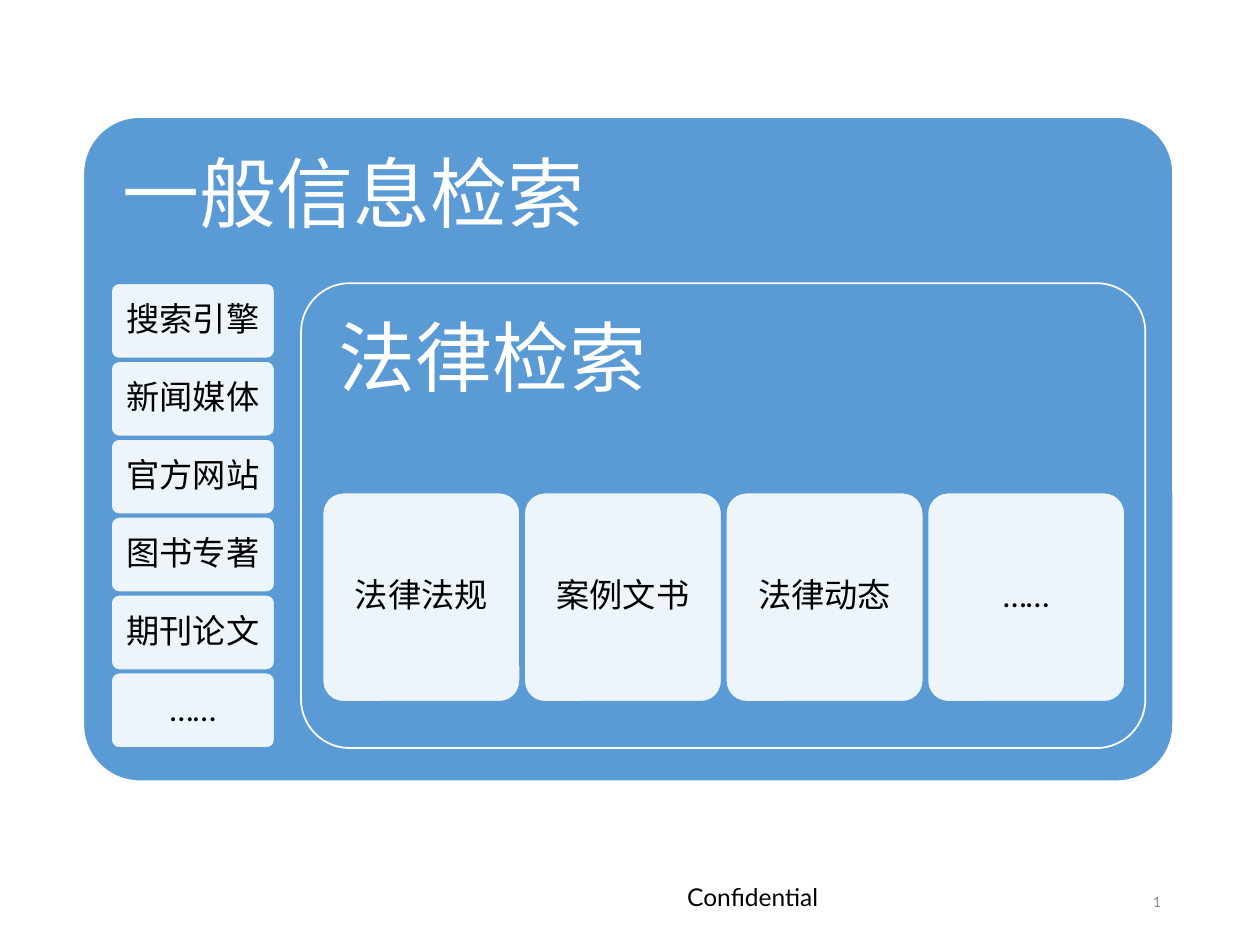
import pptx
import pptx.util
import pptx.dml.color
import pptx.enum.shapes
import pptx.enum.text
import pptx.oxml
import pptx.oxml.ns
import lxml.etree

Cm = pptx.util.Cm
ALIGN = pptx.enum.text.PP_ALIGN
ANCHOR = pptx.enum.text.MSO_ANCHOR
BLUE, WHITE, BLACK, GRAY = "5B9BD5", "FFFFFF", "000000", "8C8C8C"
HEADING = {"size": 44, "color": WHITE, "align": ALIGN.LEFT, "anchor": ANCHOR.TOP, "inset": 0.46}
CARD = {"size": 19, "color": BLACK, "align": ALIGN.CENTER, "anchor": ANCHOR.MIDDLE, "inset": 0.2}


def color(hex_string):
    return pptx.dml.color.RGBColor.from_string(hex_string)


def write_text(shape, text, size, color_hex, align, anchor, inset, font="Calibri", line_spacing=0.9):
    frame = shape.text_frame
    frame.text = text
    margin = Cm(inset)
    frame_format = {
        "word_wrap": True, "auto_size": pptx.enum.text.MSO_AUTO_SIZE.NONE,
        "vertical_anchor": anchor, "margin_left": margin, "margin_right": margin,
        "margin_top": margin, "margin_bottom": margin,
    }
    paragraph = frame.paragraphs[0]
    run_font = paragraph.runs[0].font
    formats = (
        (frame, frame_format),
        (paragraph, {"alignment": align, "line_spacing": line_spacing}),
        (run_font, {"size": pptx.util.Pt(size), "name": font}),
    )
    for target, values in formats:
        for name, value in values.items():
            setattr(target, name, value)
    run_font.color.rgb = color(color_hex)


def write_styled(shape, text, style):
    write_text(shape, text, style["size"], style["color"], style["align"],
               style["anchor"], style["inset"])


def add_round_box(slide, box, radius, fill, line, opacity=100):
    shape = slide.shapes.add_shape(
        pptx.enum.shapes.MSO_SHAPE.ROUNDED_RECTANGLE, *map(Cm, box))
    shape.adjustments[0] = radius
    shape.shadow.inherit = False
    shape.fill.solid()
    shape.fill.fore_color.rgb = color(fill)
    shape.line.color.rgb = color(line)
    shape.line.width = pptx.util.Pt(1)
    if opacity < 100:
        fill_color = shape.fill._xPr.find(".//" + pptx.oxml.ns.qn("a:srgbClr"))
        alpha = lxml.etree.SubElement(fill_color, pptx.oxml.ns.qn("a:alpha"))
        alpha.set("val", str(opacity * 1000))
    return shape


def add_cards(slide, box, labels, gap, vertical):
    left, top, width, height = box
    count = len(labels)
    length = ((height if vertical else width) - gap * (count - 1)) / count
    for index, label in enumerate(labels):
        offset = index * (length + gap)
        if vertical:
            card_box = (left, top + offset, width, length)
        else:
            card_box = (left + offset, top, length, height)
        card = add_round_box(slide, card_box, 0.105, WHITE, BLUE, 90)
        write_styled(card, label, CARD)


def add_legal_search(slide, box):
    left, top, width, height = box
    panel = add_round_box(slide, box, 0.105, BLUE, WHITE)
    write_styled(panel, "法律检索", HEADING)
    labels = ["法律法规", "案例文书", "法律动态", "……"]
    add_cards(slide, (left + 0.43, top + 4.22, width - 0.84, 4.22), labels, 0.08, False)


def add_general_search(slide, box):
    left, top, width, height = box
    add_round_box(slide, box, 0.085, BLUE, WHITE)

    title = slide.shapes.title
    title_box = {"left": left + 0.33, "top": top + 0.33, "width": width - 0.66, "height": 2.6}
    for name, value in title_box.items():
        setattr(title, name, Cm(value))
    write_styled(title, "一般信息检索", HEADING)
    slide.shapes._spTree.append(title._element)

    labels = ["搜索引擎", "新闻媒体", "官方网站", "图书专著", "期刊论文", "……"]
    add_cards(slide, (left + 0.56, top + 3.35, 3.3, 9.37), labels, 0.05, True)
    add_legal_search(slide, (left + 4.39, top + 3.35, 17.02, 9.37))


def add_footer(slide, box):
    left, top, width, height = box
    notice = slide.shapes.add_textbox(Cm(left), Cm(top), Cm(4.45), Cm(0.86))
    write_text(notice, "Confidential", 14, BLACK, ALIGN.CENTER, ANCHOR.MIDDLE, 0.13, "Lato", 1.0)
    number = slide.shapes.add_textbox(Cm(left + width - 5.72), Cm(top), Cm(5.72), Cm(height))
    write_text(number, "1", 9, GRAY, ALIGN.RIGHT, ANCHOR.MIDDLE, 0.25, line_spacing=1.0)
    run = number.text_frame.paragraphs[0].runs[0]._r
    run.tag = pptx.oxml.ns.qn("a:fld")
    run.set("id", "{B6F15528-21DE-4FAA-801E-634DDDAF4B2B}")
    run.set("type", "slidenum")


def main():
    presentation = pptx.Presentation()
    presentation.slide_width = Cm(25.4)
    presentation.slide_height = Cm(19.05)
    slide = presentation.slides.add_slide(presentation.slide_layouts[5])
    add_general_search(slide, (1.68, 2.36, 21.97, 13.39))
    add_footer(slide, (12.95, 17.65, 10.7, 1.02))
    presentation.save("out.pptx")


if __name__ == "__main__":
    main()
